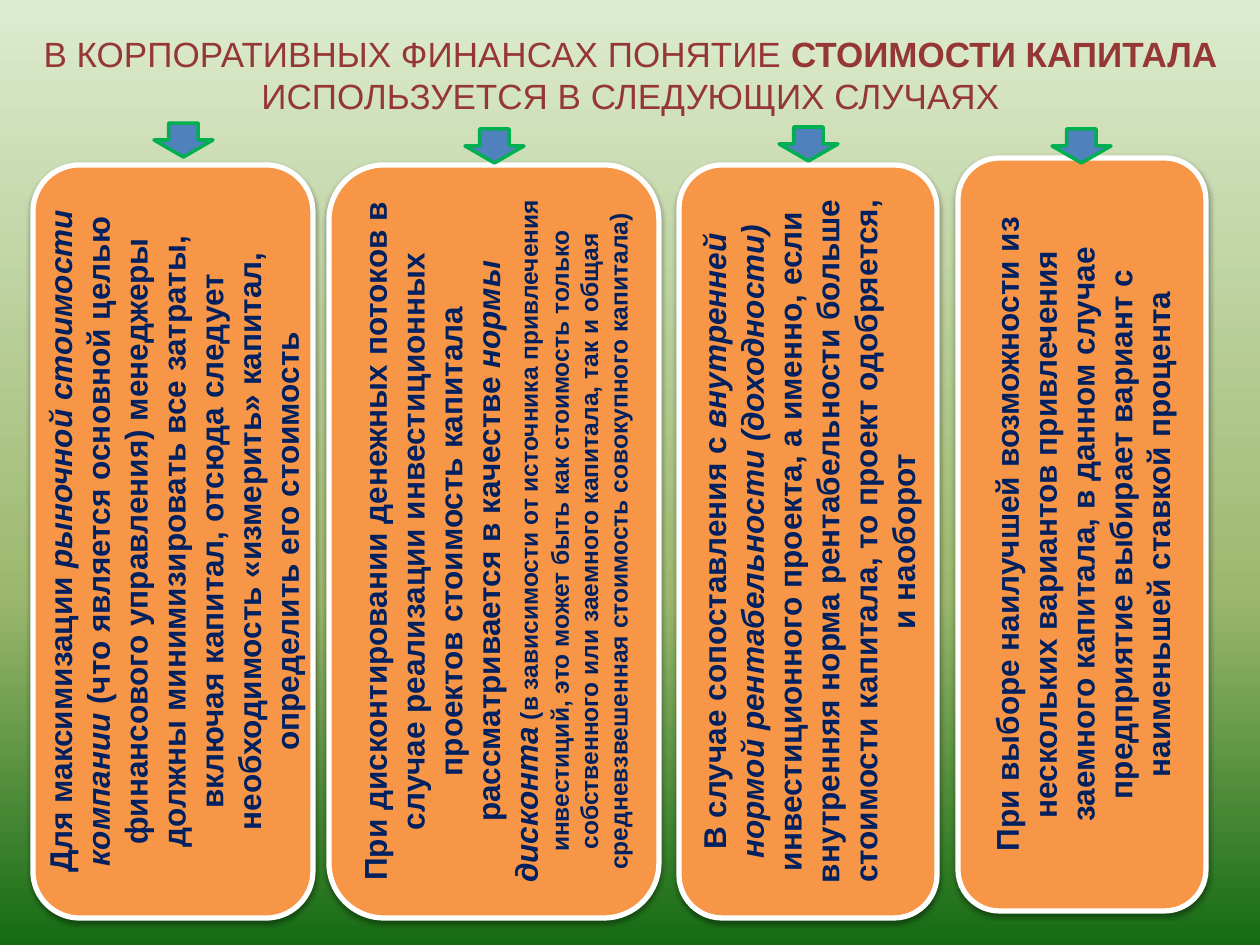
from copy import deepcopy

from pptx import Presentation
from pptx.dml.color import RGBColor
from pptx.enum.shapes import MSO_SHAPE
from pptx.enum.text import MSO_ANCHOR, MSO_AUTO_SIZE, PP_ALIGN
from pptx.oxml import parse_xml
from pptx.oxml.ns import nsdecls, qn
from pptx.util import Inches, Pt

ROUNDED = MSO_SHAPE.ROUNDED_RECTANGLE
DOWN_ARROW = MSO_SHAPE.DOWN_ARROW
TOP = MSO_ANCHOR.TOP
MIDDLE = MSO_ANCHOR.MIDDLE
CENTER = PP_ALIGN.CENTER
NO_AUTOFIT = MSO_AUTO_SIZE.NONE

PX = Inches(1) / 126
FONT = "Arial"
COLORS = {
    "title": "953735",
    "card": "F79646",
    "card_line": "FFFFFF",
    "card_text": "002060",
    "arrow": "4F81BD",
    "arrow_line": "00B050",
    "shadow": "000000",
}
BACKGROUND_STOPS = [(0, "DDEBCF"), (0.63, "9CB86E"), (1, "156B13")]
TITLE = [
    ("В КОРПОРАТИВНЫХ ФИНАНСАХ ПОНЯТИЕ ", {}),
    ("СТОИМОСТИ КАПИТАЛА ", {"bold": True}),
    ("ИСПОЛЬЗУЕТСЯ В СЛЕДУЮЩИХ СЛУЧАЯХ", {}),
]
ITALIC = {"italic": True}
SMALL = {"size": Pt(14)}
CARD_HEIGHT = 753
CARDS = [
    (33, 165, 280, [
        ("Для максимизации ", {}),
        ("рыночной стоимости компании ", ITALIC),
        ("(что является основной целью финансового управления) менеджеры "
         "должны минимизировать все затраты, включая капитал, отсюда следует "
         "необходимость «измерить» капитал, определить его стоимость", {}),
    ]),
    (329, 165, 330, [
        ("При дисконтировании денежных потоков в случае реализации "
         "инвестиционных проектов стоимость капитала рассматривается "
         "в качестве ", {}),
        ("нормы дисконта", ITALIC),
        (" ", ITALIC | SMALL),
        ("(в зависимости от источника привлечения инвестиций, это может быть "
         "как стоимость только собственного или заемного капитала, так и общая "
         "средневзвешенная стоимость совокупного капитала)", SMALL),
    ]),
    (679, 165, 258, [
        ("В случае сопоставления с ", {}),
        ("внутренней нормой рентабельности (доходности) ", ITALIC),
        ("инвестиционного проекта, а именно, если внутренняя норма "
         "рентабельности больше стоимости капитала, то проект одобряется, "
         "и наоборот", {}),
    ]),
    (958, 158, 248, [
        ("При выборе наилучшей возможности из нескольких вариантов привлечения "
         "заемного капитала, в данном случае предприятие выбирает вариант "
         "с наименьшей ставкой процента", {}),
    ]),
]
ARROW_SIZE = (59, 34)
ARROWS = [(154, 123), (465, 129), (779, 127), (1052, 129)]


def px(*lengths):
    return [round(length * PX) for length in lengths]


def rgb(name):
    return RGBColor.from_string(COLORS[name])


def paint_background(slide):
    fill = slide.background.fill
    fill.gradient()
    fill.gradient_angle = 270
    stop_list = slide.element.find(".//" + qn("a:gsLst"))
    stop_list.append(deepcopy(stop_list[0]))
    for stop, (position, color) in zip(fill.gradient_stops, BACKGROUND_STOPS):
        stop.position = position
        stop.color.rgb = RGBColor.from_string(color)


def write_text(frame, runs, size, color, bold, anchor):
    frame.word_wrap = True
    frame.auto_size = NO_AUTOFIT
    frame.vertical_anchor = anchor
    paragraph = frame.paragraphs[0]
    paragraph.alignment = CENTER
    font = paragraph.font
    font.name = FONT
    font.size = Pt(size)
    font.bold = bold
    font.color.rgb = rgb(color)
    for text, styles in runs:
        run = paragraph.add_run()
        run.text = text
        for style, value in styles.items():
            setattr(run.font, style, value)


def place_title(slide):
    title = slide.shapes.title
    title.left, title.top, title.width, title.height = px(25, 26, 1211, 97)
    write_text(title.text_frame, TITLE, 20, "title", False, TOP)


def add_filled_shape(slide, preset, box, fill, line, line_width):
    shape = slide.shapes.add_shape(preset, *px(*box))
    shape.shadow.inherit = False
    shape.fill.solid()
    shape.fill.fore_color.rgb = rgb(fill)
    shape.line.color.rgb = rgb(line)
    shape.line.width = Pt(line_width)
    return shape


def add_drop_shadow(shape):
    effects = shape.element.spPr.find(qn("a:effectLst"))
    effects.append(parse_xml(
        f'<a:outerShdw {nsdecls("a")} blurRad="{Pt(3.1)}" dist="{Pt(1.6)}" '
        f'dir="5400000" rotWithShape="0"><a:srgbClr val="{COLORS["shadow"]}">'
        '<a:alpha val="38000"/></a:srgbClr></a:outerShdw>'
    ))


def add_card(slide, left, top, width, runs):
    card = add_filled_shape(slide, ROUNDED, (left, top, width, CARD_HEIGHT),
                            "card", "card_line", 3)
    add_drop_shadow(card)
    write_text(card.text_frame, runs, 18, "card_text", True, MIDDLE)
    card.element.txBody.find(qn("a:bodyPr")).set("vert", "vert270")


def add_arrow(slide, left, top):
    add_filled_shape(slide, DOWN_ARROW, (left, top, *ARROW_SIZE),
                     "arrow", "arrow_line", 2)


def main():
    presentation = Presentation()
    presentation.slide_width, presentation.slide_height = px(1260, 945)
    slide = presentation.slides.add_slide(presentation.slide_layouts[5])
    paint_background(slide)
    place_title(slide)
    for card in CARDS:
        add_card(slide, *card)
    for arrow in ARROWS:
        add_arrow(slide, *arrow)
    presentation.save("out.pptx")


if __name__ == "__main__":
    main()
